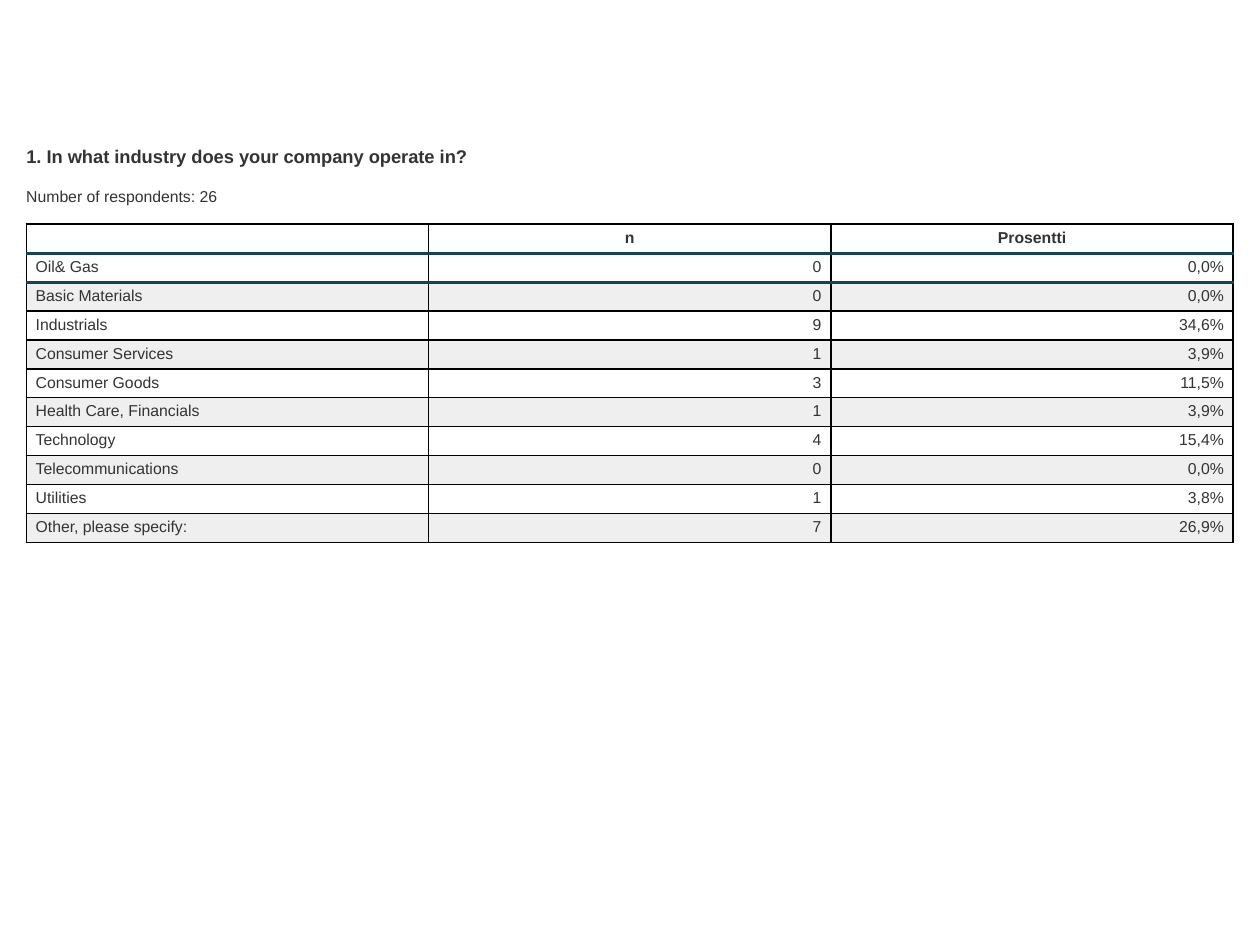
from dataclasses import dataclass
from typing import NamedTuple

from lxml.etree import SubElement
from pptx import Presentation
from pptx.dml.color import RGBColor as Rgb
from pptx.enum.text import MSO_ANCHOR as Anchor, PP_ALIGN as Align
from pptx.oxml.ns import qn
from pptx.util import Cm, Pt


@dataclass(frozen=True)
class Theme:
    face: str = "Arial"
    ink: str = "333333"
    band: str = "EFEFEF"
    grid: str = "000000"
    rule: str = "124456"
    head: float = 10.5
    body: float = 9
    thin: float = 1
    thick: float = 2


class Row(NamedTuple):
    name: str
    count: str
    share: str


THEME = Theme()
LEFT, WIDTH = Cm(0.53), Cm(24.33)
TABLE_TOP, ROW_HIGH = Cm(4.52), Cm(0.57)
ROWS = [
    Row("", "n", "Prosentti"),
    Row("Oil& Gas", "0", "0,0%"),
    Row("Basic Materials", "0", "0,0%"),
    Row("Industrials", "9", "34,6%"),
    Row("Consumer Services", "1", "3,9%"),
    Row("Consumer Goods", "3", "11,5%"),
    Row("Health Care, Financials", "1", "3,9%"),
    Row("Technology", "4", "15,4%"),
    Row("Telecommunications", "0", "0,0%"),
    Row("Utilities", "1", "3,8%"),
    Row("Other, please specify:", "7", "26,9%"),
]


def write(frame, text: str, size: float, bold: bool = False,
          align: Align = Align.LEFT) -> None:
    """Fill a text frame with one styled paragraph."""
    frame.text = text
    para = frame.paragraphs[0]
    para.alignment = align
    font = para.font
    font.name, font.size, font.bold = THEME.face, Pt(size), bold
    font.color.rgb = Rgb.from_string(THEME.ink)
    if not text:  # an empty cell takes its height from the end mark
        SubElement(para._p, qn("a:endParaRPr"), sz=str(int(size * 100)))


def place(shape, top: Cm, high: Cm, text: str, size: float,
          bold: bool = False) -> None:
    """Set a line of text across the full width, without insets."""
    shape.left, shape.top, shape.width, shape.height = LEFT, top, WIDTH, high
    frame = shape.text_frame
    frame.word_wrap = True
    frame.vertical_anchor = Anchor.TOP
    frame.margin_left = frame.margin_right = 0
    frame.margin_top = frame.margin_bottom = 0
    write(frame, text, size, bold)


def edge(cell, side: str, color: str, width: float) -> None:
    """Draw one border of a cell."""
    props = cell._tc.get_or_add_tcPr()
    line = SubElement(props, qn(f"a:ln{side}"), w=str(Pt(width)))
    fill = SubElement(line, qn("a:solidFill"))
    SubElement(fill, qn("a:srgbClr"), val=color)


def draw_cell(cell, row: int, col: int, text: str) -> None:
    """Write, frame and fill one table cell."""
    head = row == 0
    cell.margin_left = cell.margin_right = Cm(0.19)
    cell.margin_top = cell.margin_bottom = Cm(0.1)
    align = Align.CENTER if head else Align.RIGHT if col else Align.LEFT
    write(cell.text_frame, text, THEME.body, head, align)
    # Heavy rules lie above and below the first data row
    thin, thick = (THEME.grid, THEME.thin), (THEME.rule, THEME.thick)
    edge(cell, "L", *thin)
    edge(cell, "R", *thin)
    edge(cell, "T", *(thick if row in (1, 2) else thin))
    edge(cell, "B", *(thick if row in (0, 1) else thin))
    if row and row % 2 == 0:
        cell.fill.solid()
        cell.fill.fore_color.rgb = Rgb.from_string(THEME.band)
    else:
        cell.fill.background()


def draw_table(slide, rows: list[Row]) -> None:
    """Build the table of answers in equal columns."""
    cols = len(Row._fields)
    table = slide.shapes.add_table(
        len(rows), cols, LEFT, TABLE_TOP, WIDTH, ROW_HIGH * len(rows)).table
    table.first_row = table.horz_banding = False
    for r, row in enumerate(rows):
        for c, text in enumerate(row):
            draw_cell(table.cell(r, c), r, c, text)


def main() -> None:
    deck = Presentation()
    deck.slide_width, deck.slide_height = Cm(25.4), Cm(19.05)
    slide = deck.slides.add_slide(deck.slide_layouts[5])

    # Question and number of answers
    place(slide.shapes.title, Cm(2.92), Cm(0.46),
          "1. In what industry does your company operate in?",
          THEME.head, True)
    note = slide.shapes.add_textbox(0, 0, 0, 0)
    place(note, Cm(3.76), Cm(0.38), "Number of respondents: 26", THEME.body)

    # Answers
    draw_table(slide, ROWS)
    deck.save("out.pptx")


if __name__ == "__main__":
    main()
